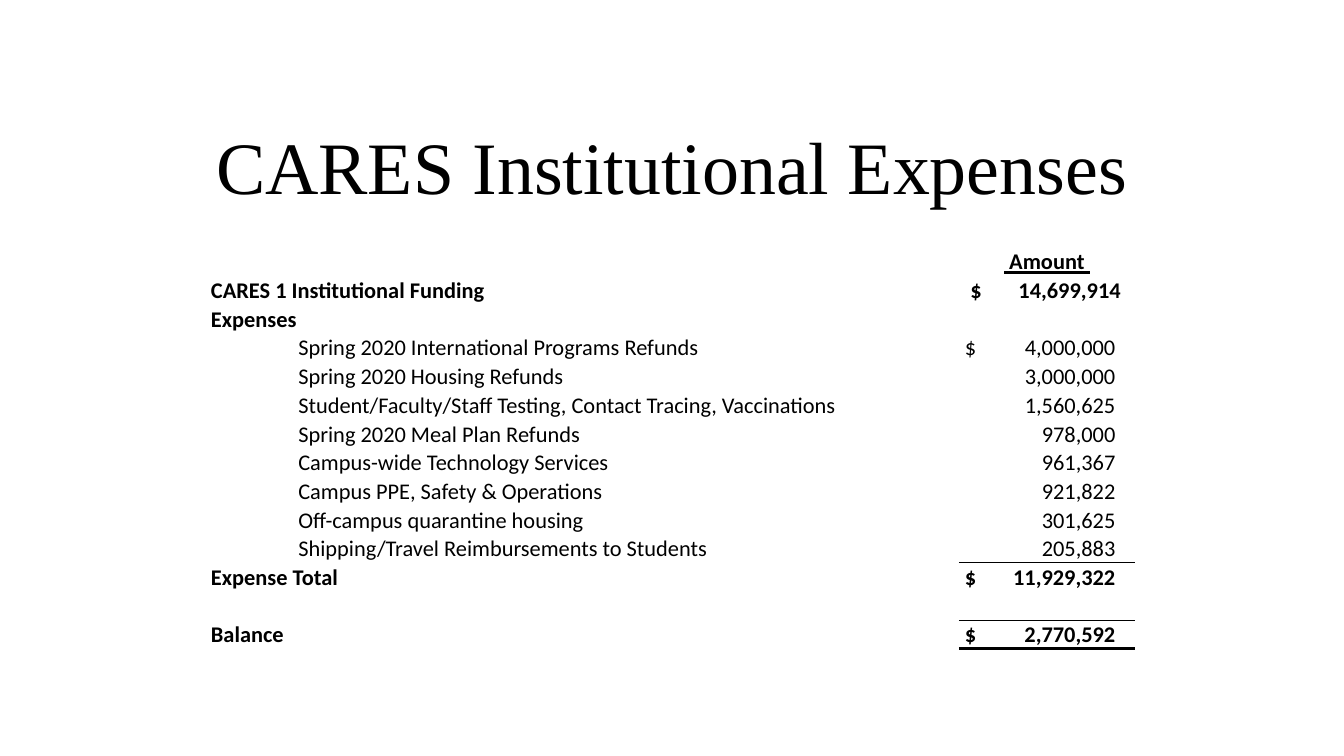
from lxml.etree import SubElement
from pptx import Presentation
from pptx.dml.color import RGBColor
from pptx.enum.text import MSO_ANCHOR, PP_ALIGN
from pptx.oxml.ns import qn
from pptx.util import Inches, Pt

BLACK = RGBColor(0, 0, 0)
TITLE_FONT, TABLE_FONT = "Times New Roman", "Calibri"
SIZE = Pt(12)
COLUMNS = (0.65, 4.93, 1.3)  # indent, description, amount
TABLE_HEIGHT = 2.99
AMOUNT_TAB = 1.12

# Label, currency sign, amount; items are indented, headings are bold
ITEMS = [
    ("Spring 2020 International Programs Refunds", "$", "4,000,000"),
    ("Spring 2020 Housing Refunds", "", "3,000,000"),
    ("Student/Faculty/Staff Testing, Contact Tracing, Vaccinations", "", "1,560,625"),
    ("Spring 2020 Meal Plan Refunds", "", "978,000"),
    ("Campus-wide Technology Services", "", "961,367"),
    ("Campus PPE, Safety & Operations", "", "921,822"),
    ("Off-campus quarantine housing", "", "301,625"),
    ("Shipping/Travel Reimbursements to Students", "", "205,883"),
]
FUNDING = ("CARES 1 Institutional Funding", "$", "14,699,914")
TOTAL = ("Expense Total", "$", "11,929,322")
BALANCE = ("Balance", "$", "2,770,592")


def add_title(s, text):
    title = s.shapes.title
    title.left, title.top = Inches(0.5), Inches(0.83)
    title.width, title.height = Inches(9), Inches(0.8)
    tf = title.text_frame
    tf.text = text
    tf.vertical_anchor = MSO_ANCHOR.MIDDLE
    p = tf.paragraphs[0]
    p.alignment = PP_ALIGN.CENTER
    p.font.name, p.font.size = TITLE_FONT, Pt(39.6)
    p.font.color.rgb = BLACK


def add_plain_table(s, rows):
    frame = s.shapes.add_table(
        rows, len(COLUMNS), Inches(1.56), Inches(1.84),
        Inches(sum(COLUMNS)), Inches(TABLE_HEIGHT))
    table = frame.table
    table.first_row = table.horz_banding = False
    for column, width in zip(table.columns, COLUMNS):
        column.width = Inches(width)
    for row in table.rows:
        row.height = Inches(TABLE_HEIGHT / rows)
        for cell in row.cells:
            fill_cell(cell)
    return table


def fill_cell(cell, text="", bold=False, left=0.01):
    cell.fill.background()
    cell.margin_left, cell.margin_right = Inches(left), Inches(0.01)
    cell.margin_top, cell.margin_bottom = Inches(0.01), 0
    cell.vertical_anchor = MSO_ANCHOR.BOTTOM
    p = cell.text_frame.paragraphs[0]
    if text:
        p.text = text
    p.font.name, p.font.size, p.font.bold = TABLE_FONT, SIZE, bold
    p.font.color.rgb = BLACK
    # Keeps empty cells as low as the others
    p._p.get_or_add_endParaRPr().set("sz", str(int(SIZE.pt * 100)))
    return p


def fill_amount(cell, sign, amount, bold, left=0.04):
    # The sign stands left, the amount ends at a right tab
    p = cell.text_frame.paragraphs[0]
    pPr = p._p.get_or_add_pPr()
    tabs = pPr.makeelement(qn("a:tabLst"), {})
    SubElement(tabs, qn("a:tab"), pos=str(Inches(AMOUNT_TAB)), algn="r")
    pPr.insert(0, tabs)
    fill_cell(cell, f"{sign}\t{amount}", bold, left)


def fill_heading(table, row, label):
    cell = table.cell(row, 0)
    cell.merge(table.cell(row, 1))
    fill_cell(cell, label, bold=True)


def add_border(cell, side, points):
    tcPr = cell._tc.get_or_add_tcPr()
    ln = tcPr.makeelement(qn(f"a:{side}"), {"w": str(Pt(points))})
    color = SubElement(SubElement(ln, qn("a:solidFill")), qn("a:srgbClr"))
    color.set("val", str(BLACK))
    # Borders come before the fill, top before bottom
    tcPr.insert(len(tcPr.findall(qn("a:lnT"))), ln)


def add_expenses(s):
    total = 3 + len(ITEMS)
    balance = total + 2
    table = add_plain_table(s, balance + 1)

    # Column heading
    p = fill_cell(table.cell(0, 2), " Amount ", bold=True)
    p.alignment = PP_ALIGN.CENTER
    p.font.underline = True

    # Bold rows
    fill_heading(table, 2, "Expenses")
    for row, (label, sign, amount), left in (
            (1, FUNDING, 0.08), (total, TOTAL, 0.04), (balance, BALANCE, 0.04)):
        fill_heading(table, row, label)
        fill_amount(table.cell(row, 2), sign, amount, True, left)

    # Indented items
    for row, (label, sign, amount) in enumerate(ITEMS, 3):
        fill_cell(table.cell(row, 1), label)
        fill_amount(table.cell(row, 2), sign, amount, False)

    # Rules above the sums and below the balance
    for row in (total, balance):
        add_border(table.cell(row - 1, 2), "lnB", 0.5)
        add_border(table.cell(row, 2), "lnT", 0.5)
    add_border(table.cell(balance, 2), "lnB", 2)


def main():
    prs = Presentation()
    prs.slide_width = Inches(10)
    prs.slide_height = prs.slide_width * 9 // 16
    s = prs.slides.add_slide(prs.slide_layouts[5])
    add_title(s, "CARES Institutional Expenses")
    add_expenses(s)
    prs.save("out.pptx")


if __name__ == "__main__":
    main()
